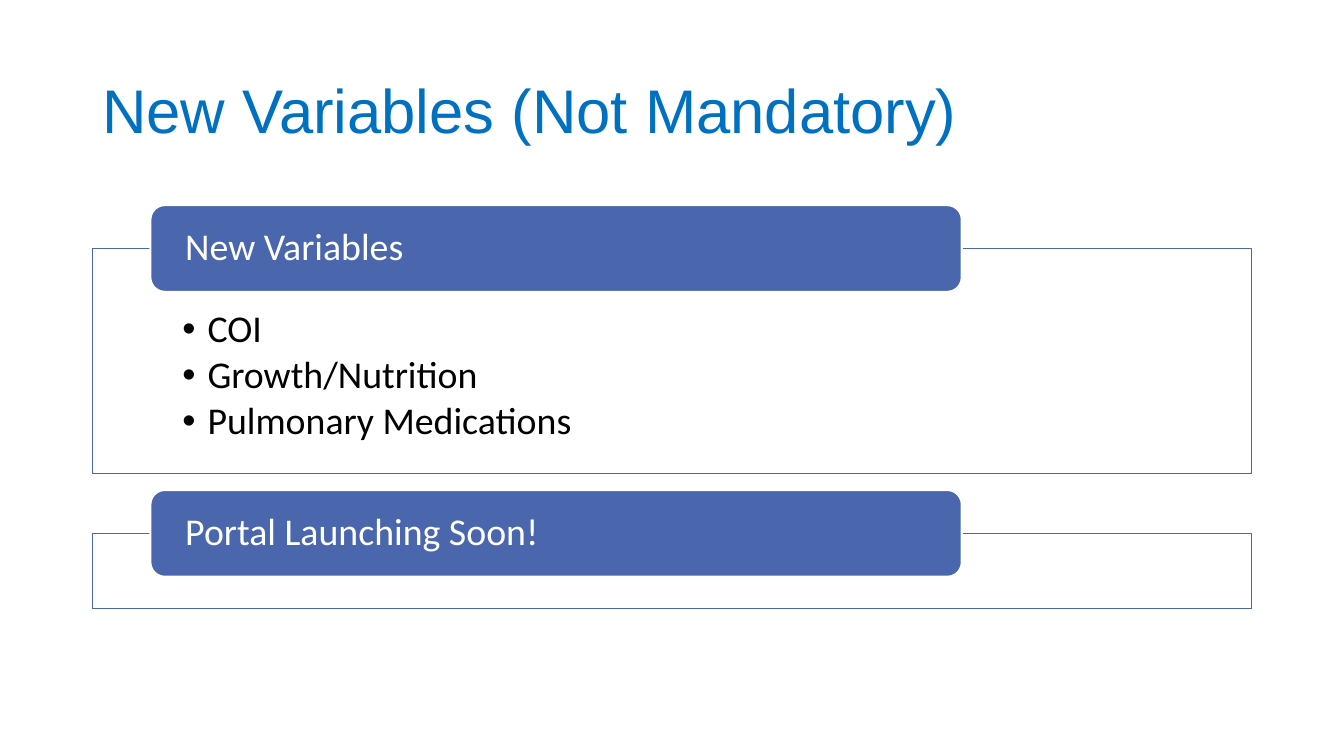
from lxml.etree import SubElement
from pptx import Presentation
from pptx.dml.color import RGBColor
from pptx.enum.shapes import MSO_SHAPE
from pptx.enum.text import MSO_ANCHOR, PP_ALIGN
from pptx.oxml.ns import qn
from pptx.util import Pt

TITLE = RGBColor(0x00, 0x70, 0xC0)
BLUE = RGBColor(0x4A, 0x66, 0xAC)
WHITE = RGBColor(0xFF, 0xFF, 0xFF)
BLACK = RGBColor(0x00, 0x00, 0x00)

LEFT, WIDTH = 66, 828
RISE = 31  # how far a header stands above its frame

# Frame top, frame height, header, bullets
PANELS = [
    (177.5, 160.7, "New Variables", ["COI", "Growth/Nutrition", "Pulmonary Medications"]),
    (381, 53.5, "Portal Launching Soon!", []),
]


def set_frame(frame, anchor, left, top, right, bottom):
    frame.word_wrap = True
    frame.vertical_anchor = anchor
    frame.margin_left, frame.margin_top = Pt(left), Pt(top)
    frame.margin_right, frame.margin_bottom = Pt(right), Pt(bottom)


def add_run(para, text, font, size, color):
    para.alignment = PP_ALIGN.LEFT
    para.line_spacing = 0.9
    run = para.add_run()
    run.text = text
    run.font.name = font
    run.font.size = Pt(size)
    run.font.color.rgb = color


def add_bullet(para):
    props = para._p.get_or_add_pPr()
    props.set("marL", str(Pt(18)))
    props.set("indent", str(Pt(-18)))
    SubElement(props, qn("a:buFont"), typeface="Arial")
    SubElement(props, qn("a:buChar"), char="•")


def add_box(slide, kind, left, top, width, height, fill, line, weight):
    box = slide.shapes.add_shape(kind, Pt(left), Pt(top), Pt(width), Pt(height))
    box.shadow.inherit = False
    box.fill.solid()
    box.fill.fore_color.rgb = fill
    box.line.color.rgb = line
    box.line.width = Pt(weight)
    return box


def add_title(slide, text):
    box = slide.shapes.add_textbox(Pt(LEFT), Pt(28.75), Pt(WIDTH), Pt(104.4))
    set_frame(box.text_frame, MSO_ANCHOR.MIDDLE, 7.2, 3.6, 7.2, 3.6)
    add_run(box.text_frame.paragraphs[0], text, "Arial", 44, TITLE)


def add_panel(slide, top, height, head, items):
    # Outlined frame with its bullets
    body = add_box(slide, MSO_SHAPE.RECTANGLE, LEFT, top, WIDTH, height,
                   WHITE, BLUE, 1)
    if items:
        frame = body.text_frame
        set_frame(frame, MSO_ANCHOR.TOP, 64.25, 44, 64.25, 15)
        for i, item in enumerate(items):
            para = frame.add_paragraph() if i else frame.paragraphs[0]
            add_bullet(para)
            para.space_after = Pt(3.6)
            add_run(para, item, "Calibri", 27, BLACK)

    # Rounded header over the top edge
    label = add_box(slide, MSO_SHAPE.ROUNDED_RECTANGLE, 107.4, top - RISE,
                    579.6, 62, BLUE, WHITE, 1.5)
    set_frame(label.text_frame, MSO_ANCHOR.MIDDLE, 21.9, 0, 21.9, 0)
    add_run(label.text_frame.paragraphs[0], head, "Calibri", 27, WHITE)


def main():
    deck = Presentation()
    deck.slide_width, deck.slide_height = Pt(960), Pt(540)
    slide = deck.slides.add_slide(deck.slide_layouts[6])
    add_title(slide, "New Variables (Not Mandatory)")
    for panel in PANELS:
        add_panel(slide, *panel)
    deck.save("out.pptx")


if __name__ == "__main__":
    main()
